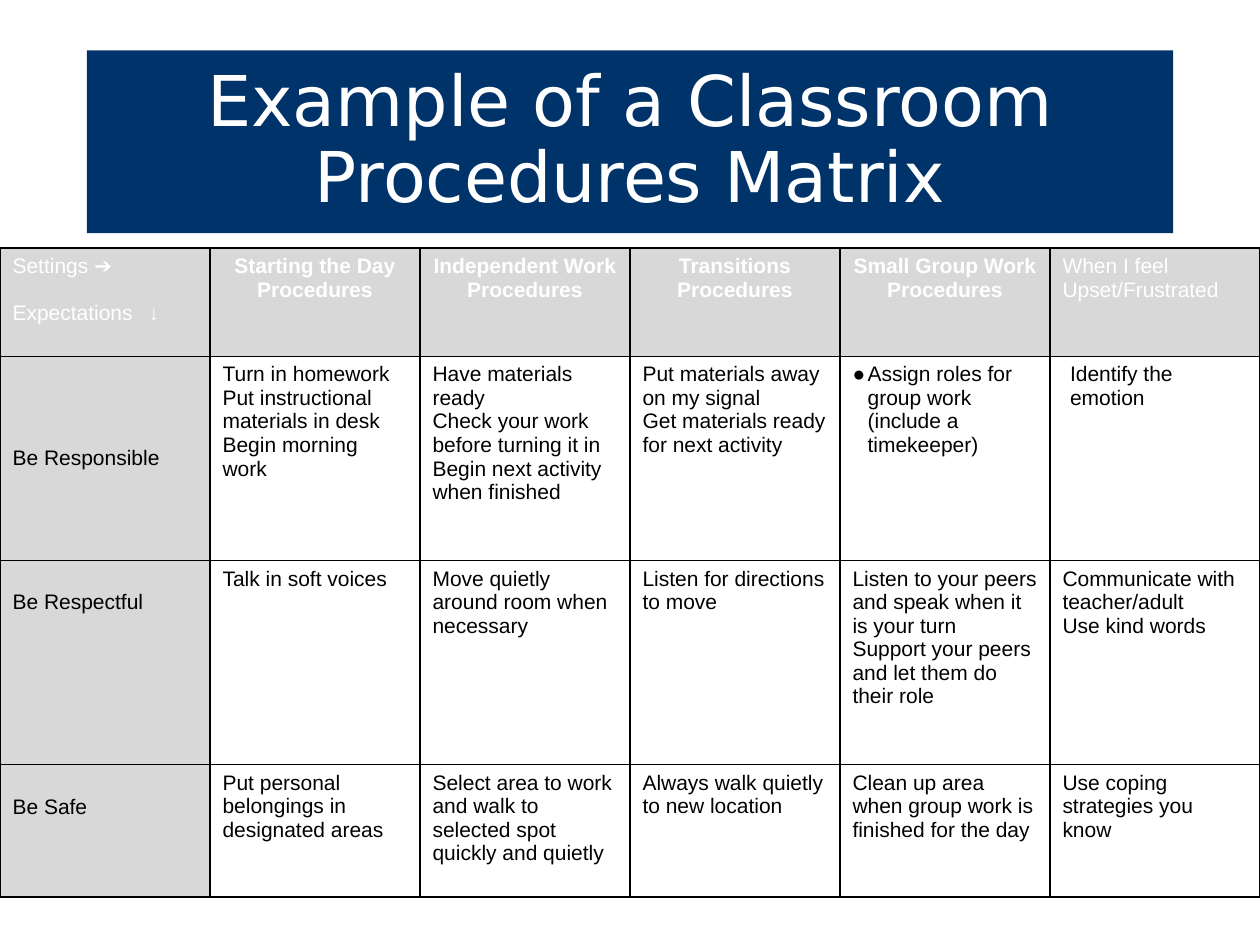
from lxml.etree import SubElement
from pptx import Presentation
from pptx.dml.color import RGBColor
from pptx.enum.text import MSO_ANCHOR, MSO_AUTO_SIZE, PP_ALIGN
from pptx.oxml.ns import qn
from pptx.util import Inches, Pt

NAVY = RGBColor(0x00, 0x33, 0x69)
GRAY = RGBColor(0xD8, 0xD8, 0xD8)
WHITE = RGBColor(0xFF, 0xFF, 0xFF)
BLACK = RGBColor(0x00, 0x00, 0x00)

# Each cell is a list of paragraphs.
ROWS = [
    [["Settings ➔", "Expectations\t↓"],
     ["Starting the Day", "Procedures"],
     ["Independent Work", "Procedures"],
     ["Transitions", "Procedures"],
     ["Small Group Work", "Procedures"],
     ["When I feel Upset/Frustrated"]],
    [["Be Responsible"],
     ["Turn in homework", "Put instructional materials in desk",
      "Begin morning work"],
     ["Have materials ready", "Check your work before turning it in",
      "Begin next activity when finished"],
     ["Put materials away on my signal",
      "Get materials ready for next activity"],
     ["Assign roles for group work (include a timekeeper)"],
     ["Identify the emotion"]],
    [["Be Respectful"],
     ["Talk in soft voices"],
     ["Move quietly around room when necessary"],
     ["Listen for directions to move"],
     ["Listen to your peers and speak when it is your turn",
      "Support your peers and let them do their role"],
     ["Communicate with teacher/adult", "Use kind words"]],
    [["Be Safe"],
     ["Put personal belongings in designated areas"],
     ["Select area to work and walk to selected spot quickly and quietly"],
     ["Always walk quietly to new location"],
     ["Clean up area when group work is finished for the day"],
     ["Use coping strategies you know"]],
]
ROW_HEIGHTS = [0.86, 1.62, 1.62, 1.05]


def add_text(para, text, font="Arial", size=12, color=BLACK, bold=False,
             align=PP_ALIGN.LEFT):
    para.alignment = align
    span = para.add_run()
    span.text = text
    span.font.name = font
    span.font.size = Pt(size)
    span.font.bold = bold
    span.font.color.rgb = color


def set_borders(cell):
    """Draw a 1 pt black line on all four sides, ahead of the cell's fill."""
    props = cell._tc.get_or_add_tcPr()
    for index, side in enumerate(("lnL", "lnR", "lnT", "lnB")):
        line = SubElement(props, qn(f"a:{side}"), w=str(Pt(1)))
        fill = SubElement(line, qn("a:solidFill"))
        SubElement(fill, qn("a:srgbClr"), val=str(BLACK))
        props.insert(index, line)


deck = Presentation()
deck.slide_width, deck.slide_height = Inches(10), Inches(7.5)
page = deck.slides.add_slide(deck.slide_layouts[5])

# Title banner
title = page.shapes.title
title.left, title.top = Inches(0.69), Inches(0.4)
title.width, title.height = Inches(8.62), Inches(1.45)
title.fill.solid()
title.fill.fore_color.rgb = NAVY
frame = title.text_frame
frame.word_wrap = True
frame.auto_size = MSO_AUTO_SIZE.NONE
frame.vertical_anchor = MSO_ANCHOR.MIDDLE
frame.paragraphs[0].line_spacing = 0.9
add_text(frame.paragraphs[0], "Example of a Classroom Procedures Matrix",
         font="DejaVu Sans", size=40, color=WHITE, align=PP_ALIGN.CENTER)

# Procedures matrix
matrix = page.shapes.add_table(
    len(ROWS), len(ROWS[0]), Inches(0), Inches(1.97),
    Inches(10), Inches(sum(ROW_HEIGHTS))).table
matrix.first_row = matrix.horz_banding = False
for row, height in zip(matrix.rows, ROW_HEIGHTS):
    row.height = Inches(height)

for r, row in enumerate(ROWS):
    for c, texts in enumerate(row):
        cell = matrix.cell(r, c)
        is_header = r == 0
        is_centered = is_header and 0 < c < 5
        if is_header or c == 0:
            cell.fill.solid()
            cell.fill.fore_color.rgb = GRAY
        else:
            cell.fill.background()
        set_borders(cell)
        for i, text in enumerate(texts):
            para = (cell.text_frame.add_paragraph() if i
                    else cell.text_frame.paragraphs[0])
            add_text(para, text, color=WHITE if is_header else BLACK,
                     bold=is_centered,
                     align=PP_ALIGN.CENTER if is_centered else PP_ALIGN.LEFT)

# Cells with their own layout
matrix.cell(1, 0).vertical_anchor = MSO_ANCHOR.MIDDLE
for r in (2, 3):
    matrix.cell(r, 0).margin_top = Inches(0.24)

expectations = matrix.cell(0, 0).text_frame.paragraphs[1]
expectations.space_before = Pt(13.5)
tabs = SubElement(expectations._p.get_or_add_pPr(), qn("a:tabLst"))
SubElement(tabs, qn("a:tab"), pos=str(Inches(1.08)), algn="l")

roles = matrix.cell(1, 4).text_frame.paragraphs[0]._p.get_or_add_pPr()
roles.set("marL", str(Inches(0.12)))
roles.set("indent", str(Inches(-0.12)))
bullet_color = SubElement(roles, qn("a:buClr"))
SubElement(bullet_color, qn("a:srgbClr"), val=str(BLACK))
SubElement(roles, qn("a:buFont"), typeface="Arial")
SubElement(roles, qn("a:buChar"), char="●")

emotion = matrix.cell(1, 5).text_frame.paragraphs[0]._p.get_or_add_pPr()
emotion.set("marL", str(Inches(0.06)))

deck.save("out.pptx")
